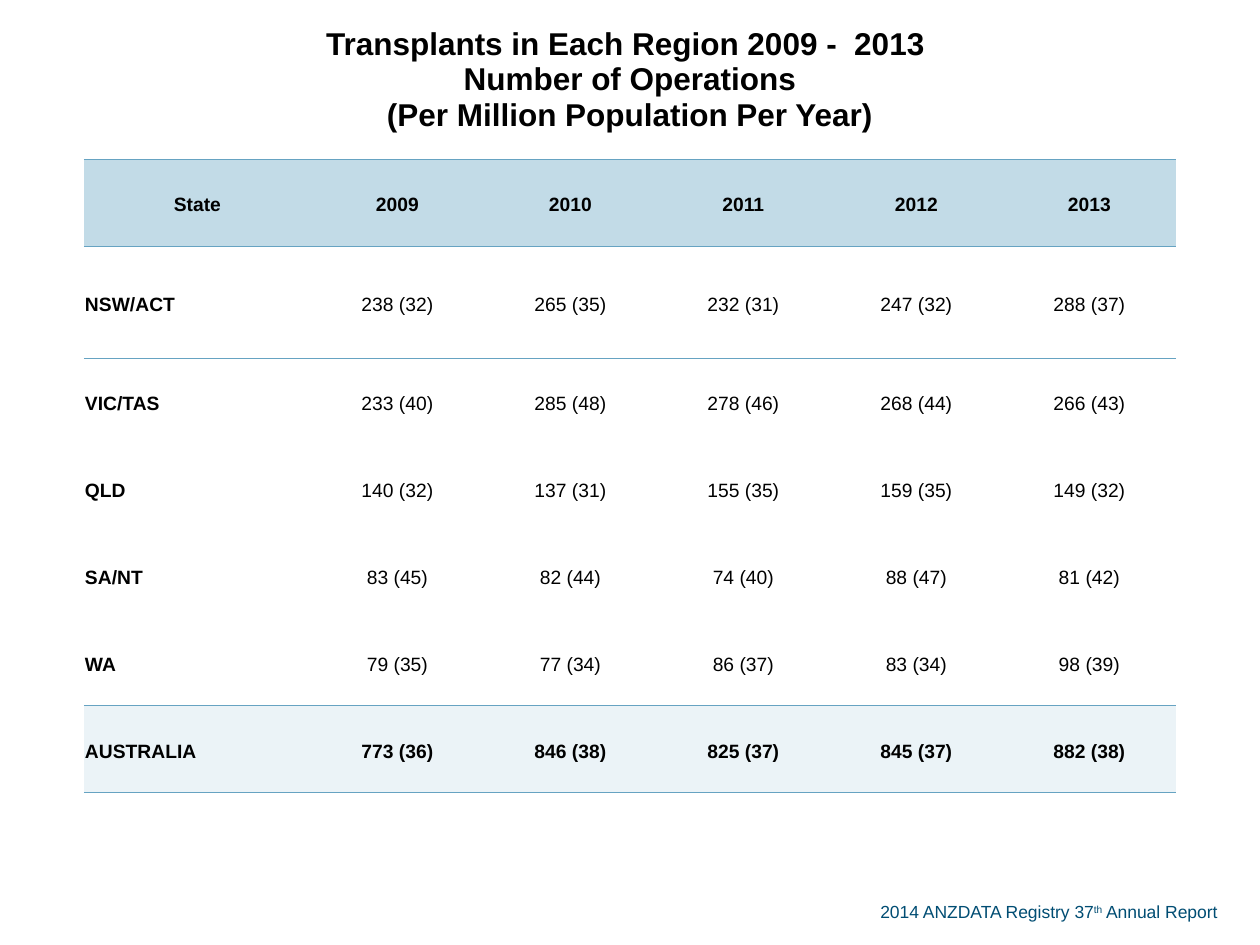
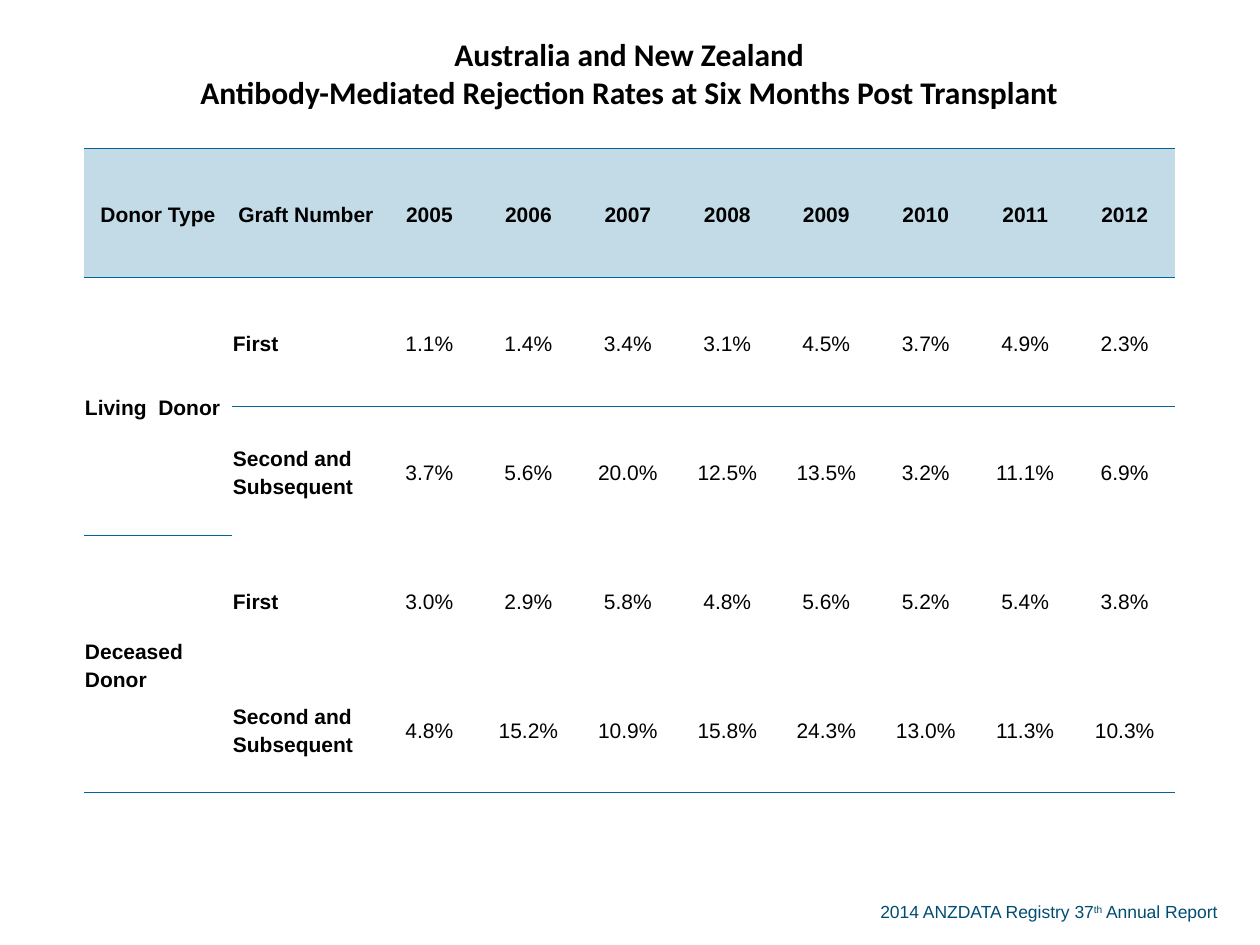
from dataclasses import dataclass

from lxml import etree
from pptx import Presentation
from pptx import util as u
from pptx.dml.color import RGBColor
from pptx.enum import text
from pptx.oxml.ns import qn

PX = 914400 // 126
COLOURS = {
    "ink": "000000",
    "footer": "004D73",
    "header": "C2DBE7",
    "total": "EBF3F7",
    "soft rule": "66A3C2",
    "strong rule": "006699",
}
BODY_FONT = "Arial"
TABLE_LEFT = 84
PLAIN_TABLE_STYLE = "{2D5ABB26-0587-4C30-8999-92F81FD0307C}"


@dataclass
class TableSlide:
    """A table whose first row is the title and second row the header."""
    title: str
    title_font: str
    body_size: int
    label_columns: int
    widths: list[int]
    heights: list[int]
    rows: list[list[str]]
    rule: str
    ruled_rows: set[int]  # rows with a line beneath them
    joined_labels: tuple[int, ...] = ()  # rows whose first cell spans two rows
    total_row: int | None = None


def px(length: int) -> u.Emu:
    return u.Emu(length * PX)


def rgb(name: str) -> RGBColor:
    return RGBColor.from_string(COLOURS[name])


def spread(total: int, count: int) -> list[int]:
    """Split a length into whole parts that add up to it."""
    return [(i + 1) * total // count - i * total // count for i in range(count)]


def add_border(cell, tag: str, position: int, colour: str) -> None:
    line = etree.Element(qn(tag), w=str(u.Pt(0.5)))
    fill = etree.SubElement(line, qn("a:solidFill"))
    etree.SubElement(fill, qn("a:srgbClr"), val=COLOURS[colour])
    cell._tc.get_or_add_tcPr().insert(position, line)


def write_cell(cell, content: str, font: str, size: int, bold: bool,
               centred: bool, spaced: bool) -> None:
    cell.text = content
    cell.vertical_anchor = text.MSO_ANCHOR.MIDDLE
    cell.margin_left = cell.margin_right = cell.margin_top = px(1)
    cell.margin_bottom = 0
    for para in cell.text_frame.paragraphs:
        para.alignment = text.PP_ALIGN.CENTER if centred else text.PP_ALIGN.LEFT
        if spaced:
            para.line_spacing = 1.19
            para.space_after = u.Pt(14)
        para.font.name = font
        para.font.size = u.Pt(size)
        para.font.bold = bold
        para.font.color.rgb = rgb("ink")


def paint_cell(cell, row: int, content: TableSlide) -> None:
    fills = {1: "header", content.total_row: "total"}
    if row in fills:
        cell.fill.solid()
        cell.fill.fore_color.rgb = rgb(fills[row])
    else:
        cell.fill.background()
    if row + cell.span_height - 1 in content.ruled_rows:
        add_border(cell, "a:lnB", 0, content.rule)
    if row - 1 in content.ruled_rows:
        add_border(cell, "a:lnT", 0, content.rule)


def add_data_table(page, content: TableSlide) -> None:
    frame = page.shapes.add_table(
        len(content.heights), len(content.widths), px(TABLE_LEFT), 0,
        px(sum(content.widths)), px(sum(content.heights)))
    table = frame.table
    table.first_row = table.horz_banding = False
    table._tbl.tblPr.find(qn("a:tableStyleId")).text = PLAIN_TABLE_STYLE
    for column, width in zip(table.columns, content.widths):
        column.width = px(width)
    for row, height in zip(table.rows, content.heights):
        row.height = px(height)

    title = table.cell(0, 0)
    title.merge(table.cell(0, len(content.widths) - 1))
    write_cell(title, content.title, content.title_font, 18, True, True, False)
    paint_cell(title, 0, content)
    for r in content.joined_labels:
        table.cell(r, 0).merge(table.cell(r + 1, 0))

    for r, values in enumerate(content.rows, 1):
        for c, value in enumerate(values):
            cell = table.cell(r, c)
            if cell.is_spanned:
                continue
            is_label = c < content.label_columns
            bold = is_label or r in (1, content.total_row)
            centred = r == 1 or not is_label
            write_cell(cell, value, BODY_FONT, content.body_size, bold, centred, True)
            paint_cell(cell, r, content)


def add_footer(page) -> None:
    box = page.shapes.add_textbox(px(868), px(895), px(377), px(34))
    box.text_frame.word_wrap = True
    box.text_frame.auto_size = text.MSO_AUTO_SIZE.SHAPE_TO_FIT_TEXT
    para = box.text_frame.paragraphs[0]
    para.font.name = BODY_FONT
    para.font.size = u.Pt(10)
    para.font.color.rgb = rgb("footer")
    for part in ("2014 ANZDATA Registry 37", "th", " Annual Report"):
        span = para.add_run()
        span.text = part
        if part == "th":
            span._r.get_or_add_rPr().set("baseline", "30000")


def split_rows(*lines: str) -> list[list[str]]:
    return [line.split("|") for line in lines]


TRANSPLANTS = TableSlide(
    title="Transplants in Each Region 2009 -  2013 \n"
          "Number of Operations\n(Per Million Population Per Year)",
    title_font=BODY_FONT,
    body_size=11,
    label_columns=1,
    widths=[227] + [173] * 5,
    heights=[159, 87, 112] + [87] * 5,
    rows=split_rows(
        "State|2009|2010|2011|2012|2013",
        "NSW/ACT|238 (32)|265 (35)|232 (31)|247 (32)|288 (37)",
        "VIC/TAS|233 (40)|285 (48)|278 (46)|268 (44)|266 (43)",
        "QLD|140 (32)|137 (31)|155 (35)|159 (35)|149 (32)",
        "SA/NT|83 (45)|82 (44)|74 (40)|88 (47)|81 (42)",
        "WA|79 (35)|77 (34)|86 (37)|83 (34)|98 (39)",
        "AUSTRALIA|773 (36)|846 (38)|825 (37)|845 (37)|882 (38)",
    ),
    rule="soft rule",
    ruled_rows={0, 1, 6, 7},
    total_row=7,
)

REJECTION_RATES = TableSlide(
    title="Australia and New Zealand\v"
          "Antibody-Mediated Rejection Rates at Six Months Post Transplant",
    title_font="Calibri",
    body_size=12,
    label_columns=2,
    widths=[148, 148] + spread(795, 8),
    heights=[148] + [129] * 5,
    rows=split_rows(
        "Donor Type|Graft Number|2005|2006|2007|2008|2009|2010|2011|2012",
        "Living  Donor|First|1.1%|1.4%|3.4%|3.1%|4.5%|3.7%|4.9%|2.3%",
        "|Second and Subsequent|3.7%|5.6%|20.0%|12.5%|13.5%|3.2%|11.1%|6.9%",
        "Deceased Donor|First|3.0%|2.9%|5.8%|4.8%|5.6%|5.2%|5.4%|3.8%",
        "|Second and Subsequent|4.8%|15.2%|10.9%|15.8%|24.3%|13.0%|11.3%|10.3%",
    ),
    rule="strong rule",
    ruled_rows={0, 1, 5},
    joined_labels=(2, 4),
)


def main() -> None:
    deck = Presentation()
    deck.slide_width, deck.slide_height = px(1260), px(945)
    blank_layout = deck.slide_layouts[6]
    for content in (TRANSPLANTS, REJECTION_RATES):
        page = deck.slides.add_slide(blank_layout)
        add_footer(page)
        add_data_table(page, content)
    deck.save("out.pptx")


if __name__ == "__main__":
    main()
